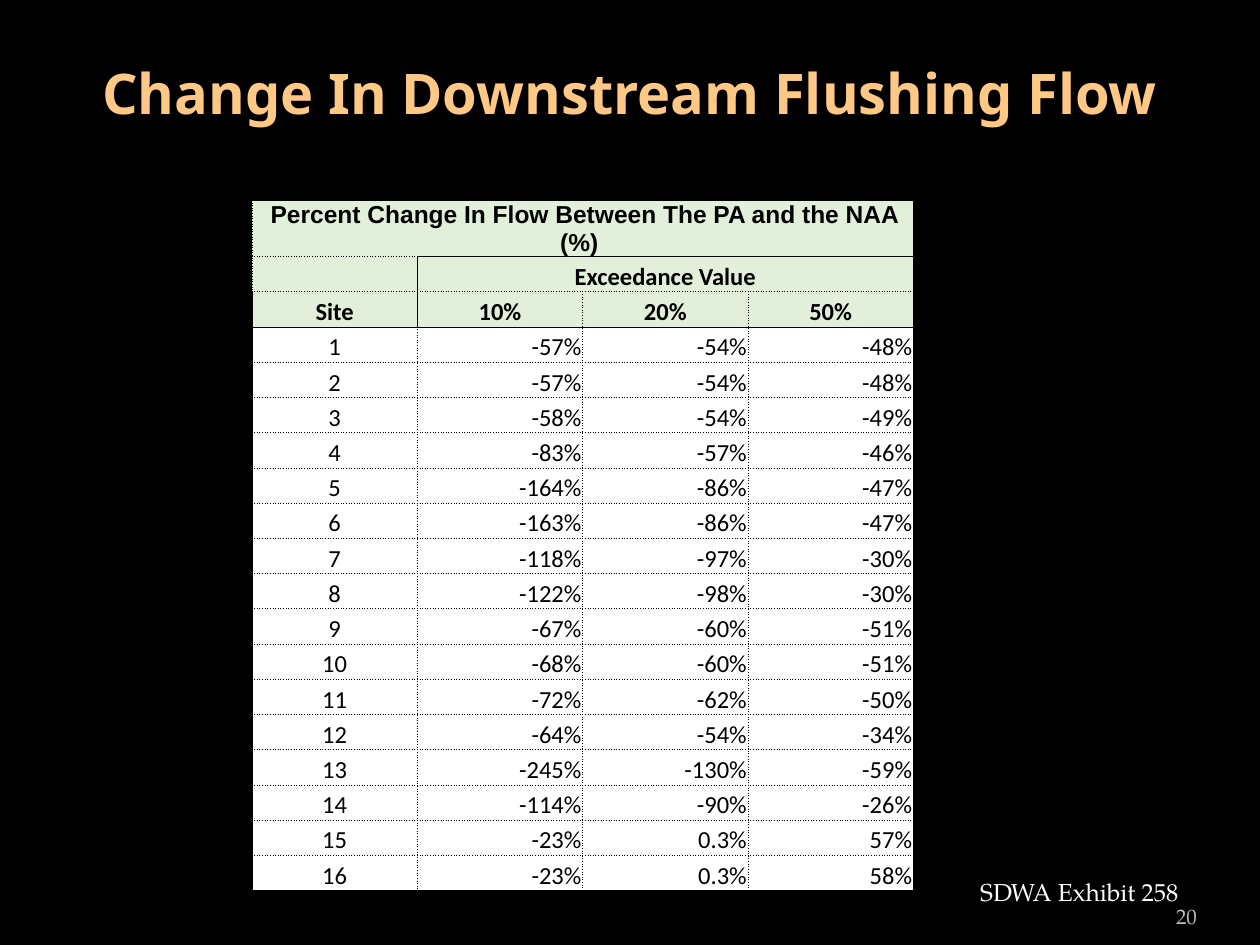
from lxml import etree
from pptx import Presentation
from pptx.dml.color import RGBColor
from pptx.enum.text import MSO_ANCHOR, PP_ALIGN
from pptx.oxml.ns import qn
from pptx.util import Pt

CENTER, RIGHT, LEFT = PP_ALIGN.CENTER, PP_ALIGN.RIGHT, PP_ALIGN.LEFT
TOP, MIDDLE, BOTTOM = MSO_ANCHOR.TOP, MSO_ANCHOR.MIDDLE, MSO_ANCHOR.BOTTOM

CHANGES = [
    ("-57%", "-54%", "-48%"),
    ("-57%", "-54%", "-48%"),
    ("-58%", "-54%", "-49%"),
    ("-83%", "-57%", "-46%"),
    ("-164%", "-86%", "-47%"),
    ("-163%", "-86%", "-47%"),
    ("-118%", "-97%", "-30%"),
    ("-122%", "-98%", "-30%"),
    ("-67%", "-60%", "-51%"),
    ("-68%", "-60%", "-51%"),
    ("-72%", "-62%", "-50%"),
    ("-64%", "-54%", "-34%"),
    ("-245%", "-130%", "-59%"),
    ("-114%", "-90%", "-26%"),
    ("-23%", "0.3%", "57%"),
    ("-23%", "0.3%", "58%"),
]
HEADER_ROWS = 3
ROWS = HEADER_ROWS + len(CHANGES)
COLUMNS = 4


def color(value):
    return RGBColor.from_string(value)


def add_run(paragraph, text, size, font, fill, bold=False):
    run = paragraph.add_run()
    run.text = text
    run.font.size = Pt(size)
    run.font.name = font
    run.font.bold = bold
    run.font.color.rgb = color(fill)


presentation = Presentation()
presentation.slide_width, presentation.slide_height = Pt(720), Pt(540)
slide = presentation.slides.add_slide(presentation.slide_layouts[6])
slide.background.fill.solid()
slide.background.fill.fore_color.rgb = color("000000")

shape = slide.shapes.add_table(ROWS, COLUMNS, Pt(144), Pt(114.5), Pt(378), Pt(397.5))
table = shape.table
table.first_row = False
table.horz_banding = False
for column in table.columns:
    column.width = Pt(94.5)
for row in table.rows:
    row.height = Pt(20.14)
table.cell(0, 0).merge(table.cell(0, 3))
table.cell(1, 1).merge(table.cell(1, 3))

texts = {(1, 1): "Exceedance Value"}
for c, label in enumerate(("Site", "10%", "20%", "50%")):
    texts[2, c] = label
for r, values in enumerate(CHANGES):
    for c, value in enumerate((str(r + 1), *values)):
        texts[HEADER_ROWS + r, c] = value

for r in range(ROWS):
    for c in range(COLUMNS):
        cell = table.cell(r, c)
        header = r < HEADER_ROWS
        cell.margin_left = cell.margin_right = cell.margin_top = Pt(0.7)
        cell.margin_bottom = Pt(0)
        cell.vertical_anchor = BOTTOM

        end = c + (cell.span_width if cell.is_merge_origin else 1)
        solid_left, solid_right = (
            edge == COLUMNS or (edge == 0 and r >= 2) or (edge == 1 and r in (1, 2))
            for edge in (c, end)
        )
        solid_top, solid_bottom = (
            edge in (0, HEADER_ROWS, ROWS) or (edge == 1 and c > 0)
            for edge in (r, r + 1)
        )
        properties = cell._tc.get_or_add_tcPr()
        for side, solid in zip("LRTB", (solid_left, solid_right, solid_top, solid_bottom)):
            line = etree.SubElement(properties, qn(f"a:ln{side}"), w=str(Pt(0.5)))
            line_fill = etree.SubElement(line, qn("a:solidFill"))
            etree.SubElement(line_fill, qn("a:srgbClr"), val="000000")
            etree.SubElement(line, qn("a:prstDash"), val="solid" if solid else "dot")
        cell.fill.solid()
        cell.fill.fore_color.rgb = color("E2EFDA" if header else "FFFFFF")

        paragraph = cell.text_frame.paragraphs[0]
        paragraph.alignment = CENTER if header or c == 0 else RIGHT
        if (r, c) in texts:
            add_run(paragraph, texts[r, c], 14, "Calibri", "000000", header)
        else:
            paragraph._p.get_or_add_endParaRPr().set("sz", "1100")

heading = table.cell(0, 0).text_frame.paragraphs[0]
add_run(heading, " ", 11, "Calibri", "000000", True)
add_run(heading, "Percent Change In Flow Between The PA and the NAA (%) ", 14, "Arial", "000000", True)

for text, box, size, font, fill, bold, alignment, anchor, wrap, side_margin in (
    ("Change In Downstream Flushing Flow", (36, 21.6, 648, 62.6),
     32, "Noto Sans", "FFC985", True, CENTER, MIDDLE, True, 7.2),
    ("SDWA Exhibit 258", (553, 497.5, 131, 24.5),
     14, "TeX Gyre Pagella", "FFFFFF", False, LEFT, TOP, False, 7.2),
    ("20", (624.2, 505.4, 59.8, 28.8),
     12, "TeX Gyre Pagella", "BDBDBD", False, RIGHT, BOTTOM, True, 0),
):
    frame = slide.shapes.add_textbox(*map(Pt, box)).text_frame
    frame.word_wrap = wrap
    frame.vertical_anchor = anchor
    frame.margin_left = frame.margin_right = Pt(side_margin)
    paragraph = frame.paragraphs[0]
    paragraph.alignment = alignment
    add_run(paragraph, text, size, font, fill, bold)

presentation.save("out.pptx")
